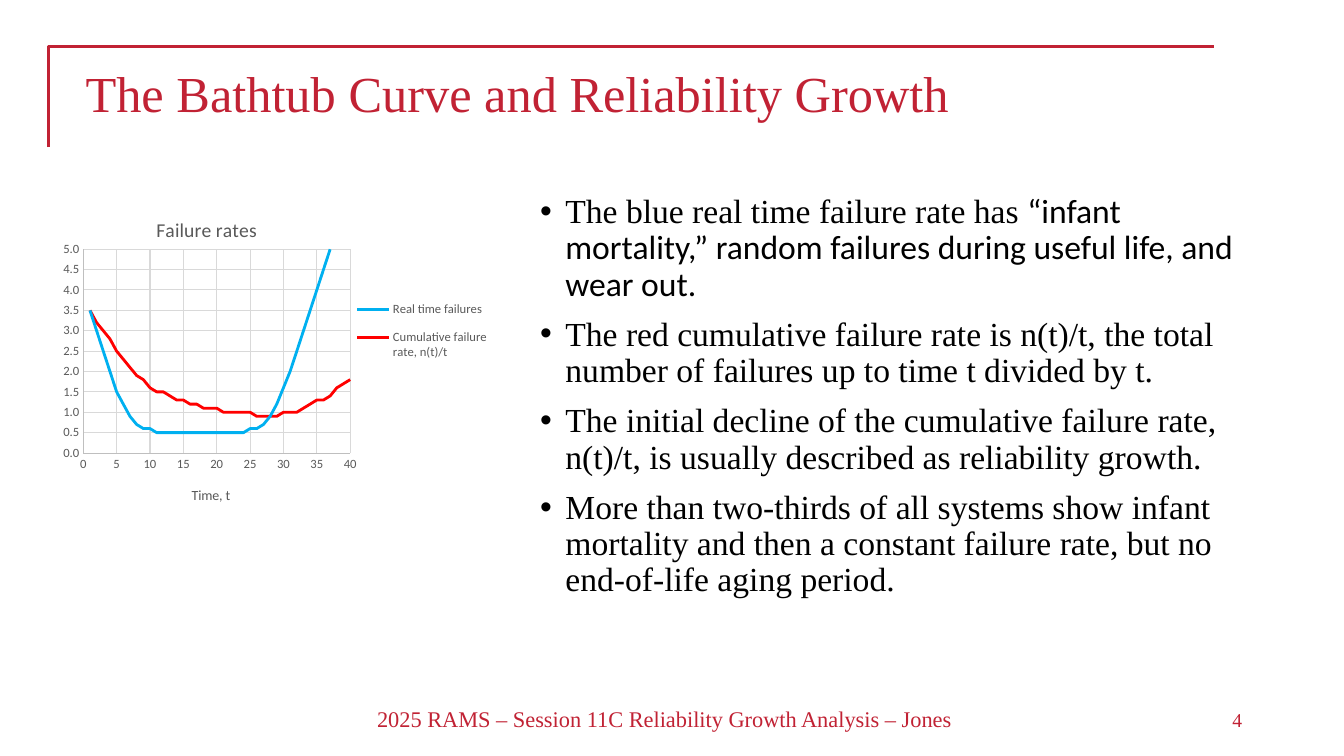
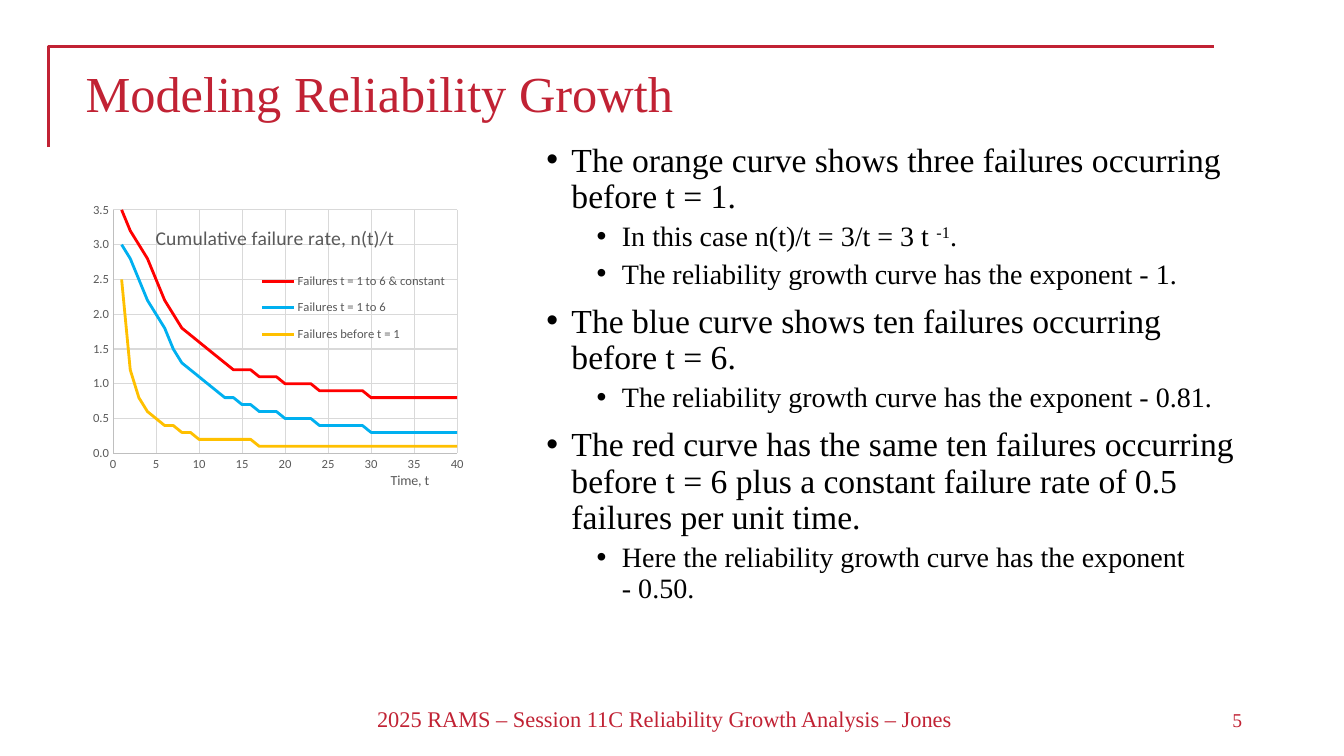
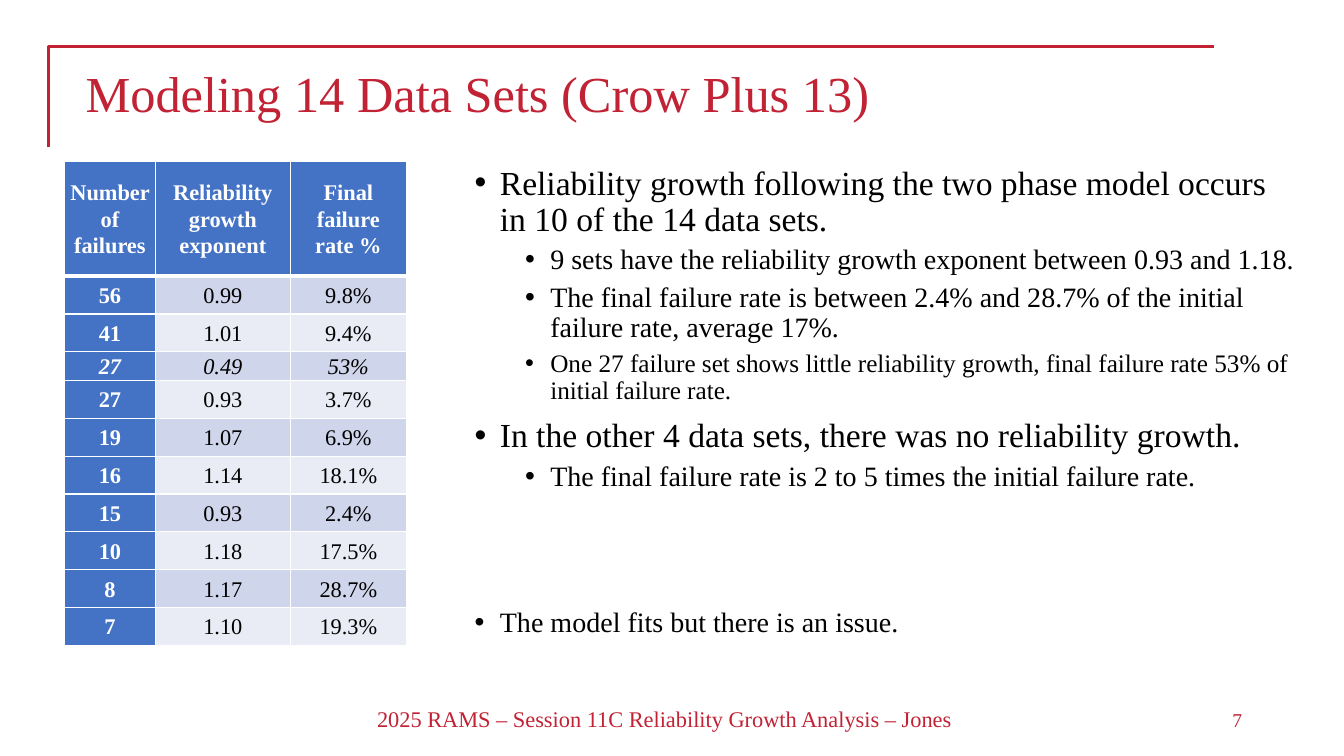
from lxml import etree
from pptx import Presentation
from pptx.chart.data import XyChartData
from pptx.dml.color import RGBColor
from pptx.enum.chart import XL_CHART_TYPE as ChartType, XL_LEGEND_POSITION as LegendPosition
from pptx.enum.chart import XL_TICK_MARK as TickMark
from pptx.enum.text import MSO_ANCHOR as Anchor, PP_ALIGN as Align
from pptx.oxml.ns import qn
from pptx.util import Inches, Pt

CRIMSON = RGBColor(0xC1, 0x22, 0x34)
BLACK = RGBColor(0, 0, 0)
WHITE = RGBColor(0xFF, 0xFF, 0xFF)
GRAY = RGBColor(0x59, 0x59, 0x59)
AXIS_GRAY = RGBColor(0xBF, 0xBF, 0xBF)
GRID_GRAY = RGBColor(0xD9, 0xD9, 0xD9)
SKY = RGBColor(0x00, 0xB0, 0xF0)
RED = RGBColor(0xFF, 0, 0)
AMBER = RGBColor(0xFF, 0xC0, 0)
HEADER_BLUE = RGBColor(0x44, 0x72, 0xC4)
BANDS = [RGBColor(0xCF, 0xD5, 0xEA), RGBColor(0xE9, 0xEB, 0xF5)]

SERIF, SANS = "Times New Roman", "Calibri"
FOOTER = "2025 RAMS – Session 11C Reliability Growth Analysis – Jones"

LEVELS = [
    {"indent": 0.25, "size": 24, "before": 10},
    {"indent": 0.75, "size": 20, "before": 5},
]

BATHTUB_CHART = {
    "at": (0.47, 1.95, 4.45, 3.17),
    "title": "Failure rates",
    "title_at": (0.235, 0.05),
    "axis_title_at": (0.316, 0.898),
    "plot_at": (0.08, 0.165, 0.595, 0.638),
    "legend_at": (0.68, 0.29, 0.31, 0.26),
    "top": 5,
    "series": [
        ("Real time failures", SKY, [
            3.5, 3, 2.5, 2, 1.5, 1.2, 0.9, 0.7, 0.6, 0.6] + [0.5] * 14 + [
            0.6, 0.6, 0.7, 0.9, 1.2, 1.6, 2, 2.5, 3, 3.5, 4, 4.5, 5, 5.5, 6, 6.5]),
        ("Cumulative failure rate, n(t)/t", RED, [
            3.5, 3.2, 3, 2.8, 2.5, 2.3, 2.1, 1.9, 1.8, 1.6,
            1.5, 1.5, 1.4, 1.3, 1.3, 1.2, 1.2, 1.1, 1.1, 1.1,
            1, 1, 1, 1, 1, 0.9, 0.9, 0.9, 0.9, 1,
            1, 1, 1.1, 1.2, 1.3, 1.3, 1.4, 1.6, 1.7, 1.8]),
    ],
}

GROWTH_CHART = {
    "at": (0.75, 2.01, 3.91, 2.88),
    "title": "Cumulative failure rate, n(t)/t",
    "title_at": (0.194, 0.063),
    "axis_title_at": (0.793, 0.926),
    "plot_at": (0.095, 0.024, 0.873, 0.848),
    "legend_at": (0.44, 0.205, 0.53, 0.32),
    "top": 3.5,
    "series": [
        ("Failures t = 1 to 6 & constant", RED, [
            3.5, 3.2, 3, 2.8, 2.5, 2.2, 2, 1.8, 1.7, 1.6,
            1.5, 1.4, 1.3, 1.2, 1.2, 1.2, 1.1, 1.1, 1.1]
            + [1] * 4 + [0.9] * 6 + [0.8] * 11),
        ("Failures t = 1 to 6", SKY, [
            3, 2.8, 2.5, 2.2, 2, 1.8, 1.5, 1.3, 1.2, 1.1,
            1, 0.9, 0.8, 0.8, 0.7, 0.7, 0.6, 0.6, 0.6]
            + [0.5] * 4 + [0.4] * 6 + [0.3] * 11),
        ("Failures before t = 1", AMBER, [
            2.5, 1.2, 0.8, 0.6, 0.5, 0.4, 0.4, 0.3, 0.3]
            + [0.2] * 7 + [0.1] * 24),
    ],
}

DATA_SETS = {
    "at": (0.64, 1.6),
    "height": 4.78,
    "columns": [0.9, 1.34, 1.15],
    "special_heights": {0: 1.14, 3: 0.26},
    "italic_row": 3,
    "rows": [
        ("Number of failures", "Reliability growth exponent", "Final failure rate %"),
        ("56", "0.99", "9.8%"),
        ("41", "1.01", "9.4%"),
        ("27", "0.49", "53%"),
        ("27", "0.93", "3.7%"),
        ("19", "1.07", "6.9%"),
        ("16", "1.14", "18.1%"),
        ("15", "0.93", "2.4%"),
        ("10", "1.18", "17.5%"),
        ("8", "1.17", "28.7%"),
        ("7", "1.10", "19.3%"),
    ],
}

PAGES = [
    {
        "title": "The Bathtub Curve and Reliability Growth",
        "number": 4,
        "chart": BATHTUB_CHART,
        "body_at": (5.26, 1.88, 7.33, 4.9),
        "bullets": [
            (0, ["The blue real time failure rate has ",
                 ("“infant mortality,” random failures during useful life, and wear out.",
                  {"name": SANS})]),
            (0, ["The red cumulative failure rate is n(t)/t, the total number of failures "
                 "up to time t divided by t."]),
            (0, ["The initial decline of the cumulative failure rate, n(t)/t, is usually "
                 "described as reliability growth."]),
            (0, ["More than two-thirds of all systems show infant mortality and then a "
                 "constant failure rate, but no end-of-life aging period."]),
        ],
    },
    {
        "title": "Modeling Reliability Growth",
        "number": 5,
        "chart": GROWTH_CHART,
        "body_at": (5.32, 1.37, 7.1, 5.38),
        "bullets": [
            (0, ["The orange curve shows three failures occurring before t = 1."]),
            (1, ["In this case n(t)/t = 3/t = 3 t ", ("-1", {"baseline": 30000}), "."]),
            (1, ["The reliability growth curve has the exponent - 1."]),
            (0, ["The blue curve shows ten failures occurring before t = 6."]),
            (1, ["The reliability growth curve has the exponent - 0.81."]),
            (0, ["The red curve has the same ten failures occurring before t = 6 plus a "
                 "constant failure rate of 0.5 failures per unit time."]),
            (1, ["Here the reliability growth curve has the exponent", "\n", "- 0.50."]),
        ],
    },
    {
        "title": "Modeling 14 Data Sets (Crow Plus 13)",
        "number": 7,
        "table": DATA_SETS,
        "body_at": (4.61, 1.6, 8.33, 5.15),
        "bullets": [
            (0, ["Reliability growth following the two phase model occurs in 10 of the 14 "
                 "data sets."]),
            (1, ["9 sets have the reliability growth exponent between 0.93 and 1.18."]),
            (1, ["The final failure rate is between 2.4% and 28.7% of the initial failure "
                 "rate, average 17%."]),
            (1, ["One 27 failure set shows little reliability growth, final failure rate "
                 "53% of initial failure rate."], {"size": 18}),
            (0, ["In the other 4 data sets, there was no reliability growth."]),
            (1, ["The final failure rate is 2 to 5 times the initial failure rate."]),
            (0, ["The model fits but there is an issue."], {"size": 20, "before": 83}),
        ],
    },
]


def style_font(font, size, color, name=SERIF, **options):
    font.color.rgb = color
    for key, value in {"size": Pt(size), "name": name, **options}.items():
        setattr(font, key, value)


def add_box(page, at, anchor=Anchor.TOP):
    frame = page.shapes.add_textbox(*map(Inches, at)).text_frame
    frame.word_wrap = True
    frame.vertical_anchor = anchor
    return frame


def add_line_of_text(page, at, text, size, align, anchor=Anchor.MIDDLE):
    para = add_box(page, at, anchor).paragraphs[0]
    para.alignment = align
    para.line_spacing = 0.9
    span = para.add_run()
    span.text = text
    style_font(span.font, size, CRIMSON)


def add_frame(page, title, number):
    builder = page.shapes.build_freeform(Inches(0.48), Inches(1.46))
    builder.add_line_segments([(Inches(0.48), Inches(0.46)), (Inches(12.04), Inches(0.46))],
                              close=False)
    corner = builder.convert_to_shape()
    corner.shadow.inherit = False
    corner.fill.background()
    corner.line.color.rgb = CRIMSON
    corner.line.width = Pt(2)
    add_line_of_text(page, (0.75, 0.64, 11.66, 0.74), title, 36, Align.LEFT, Anchor.TOP)
    add_line_of_text(page, (3.37, 6.95, 6.44, 0.4), FOOTER, 16, Align.CENTER)
    add_line_of_text(page, (9.42, 6.95, 3, 0.4), str(number), 14, Align.RIGHT)


def add_bullets(page, at, bullets):
    frame = add_box(page, at)
    for index, (level, spans, *changes) in enumerate(bullets):
        look = {**LEVELS[level], **(changes[0] if changes else {})}
        para = frame.add_paragraph() if index else frame.paragraphs[0]
        para.level = level
        para.line_spacing = 0.9
        para.space_before = Pt(look["before"] if index else 0)
        properties = para._p.get_or_add_pPr()
        properties.set("marL", str(Inches(look["indent"])))
        properties.set("indent", str(-Inches(0.25)))
        etree.SubElement(properties, qn("a:buFont"), typeface="Arial")
        etree.SubElement(properties, qn("a:buChar"), char="•")
        for item in spans:
            if item == "\n":
                para.add_line_break()
                continue
            text, extra = (item, {}) if isinstance(item, str) else item
            span = para.add_run()
            span.text = text
            style_font(span.font, look["size"], BLACK, extra.get("name", SERIF))
            if "baseline" in extra:
                span._r.get_or_add_rPr().set("baseline", str(extra["baseline"]))


def place(element, position, fractions, inner=False):
    layout = element.find(qn("c:layout"))
    if layout is not None:
        element.remove(layout)
    layout = etree.Element(qn("c:layout"))
    element.insert(position, layout)
    manual = etree.SubElement(layout, qn("c:manualLayout"))
    settings = [("layoutTarget", "inner")] if inner else []
    settings += [("xMode", "edge"), ("yMode", "edge"), *zip("xywh", fractions)]
    for tag, value in settings:
        etree.SubElement(manual, qn(f"c:{tag}"), val=str(value))


def set_title(title, text, size, at):
    para = title.text_frame.paragraphs[0]
    span = para.add_run()
    span.text = text
    style_font(span.font, size, GRAY, SANS, bold=False)
    place(title._element, 1, at)


def add_rate_chart(page, plan):
    data = XyChartData(number_format="0.0")
    for name, _, values in plan["series"]:
        series = data.add_series(name)
        for time, value in enumerate(values, 1):
            series.add_data_point(time, value)
    chart = page.shapes.add_chart(ChartType.XY_SCATTER_LINES_NO_MARKERS,
                                  *map(Inches, plan["at"]), data).chart
    style_font(chart.font, 10, BLACK, SANS)
    chart.plots[0].vary_by_categories = False
    for series, (_, color, _) in zip(chart.plots[0].series, plan["series"]):
        series.smooth = False
        series.format.line.color.rgb = color
        series.format.line.width = Pt(2)

    scales = [(chart.category_axis, 40, 5, "General"),
              (chart.value_axis, plan["top"], 0.5, "0.0")]
    for axis, top, step, number_format in scales:
        settings = {"minimum_scale": 0, "maximum_scale": top, "major_unit": step,
                    "major_tick_mark": TickMark.NONE, "minor_tick_mark": TickMark.NONE,
                    "has_major_gridlines": True}
        for key, value in settings.items():
            setattr(axis, key, value)
        axis.tick_labels.number_format = number_format
        axis.tick_labels.number_format_is_linked = False
        style_font(axis.tick_labels.font, 9, GRAY, SANS)
        for line, color in [(axis.format.line, AXIS_GRAY),
                            (axis.major_gridlines.format.line, GRID_GRAY)]:
            line.color.rgb = color
            line.width = Pt(0.75)

    chart.has_title = True
    set_title(chart.chart_title, plan["title"], 14, plan["title_at"])
    set_title(chart.category_axis.axis_title, "Time, t", 10, plan["axis_title_at"])
    chart.has_legend = True
    chart.legend.position = LegendPosition.RIGHT
    chart.legend.include_in_layout = False
    style_font(chart.legend.font, 9, GRAY, SANS)
    place(chart.legend._element, 1, plan["legend_at"])
    place(chart._chartSpace.chart.plotArea, 0, plan["plot_at"], inner=True)


def set_borders(cell, widths):
    properties = cell._tc.get_or_add_tcPr()
    for side, width in widths.items():
        line = etree.SubElement(properties, qn(f"a:ln{side}"), w=str(Pt(width)))
        fill = etree.SubElement(line, qn("a:solidFill"))
        etree.SubElement(fill, qn("a:srgbClr"), val=str(WHITE))


def add_data_table(page, plan):
    rows, columns, special = plan["rows"], plan["columns"], plan["special_heights"]
    regular = (plan["height"] - sum(special.values())) / (len(rows) - len(special))
    left, top = plan["at"]
    table = page.shapes.add_table(len(rows), len(columns), Inches(left), Inches(top),
                                  Inches(sum(columns)), Inches(plan["height"])).table
    for column, width in zip(table.columns, columns):
        column.width = Inches(width)
    for row_index, texts in enumerate(rows):
        table.rows[row_index].height = Inches(special.get(row_index, regular))
        for column_index, text in enumerate(texts):
            cell = table.cell(row_index, column_index)
            heading = row_index == 0 or column_index == 0
            set_borders(cell, {"L": 1, "R": 1, "T": 3 if row_index == 1 else 1,
                               "B": 3 if row_index == 0 else 1})
            cell.fill.solid()
            cell.fill.fore_color.rgb = HEADER_BLUE if heading else BANDS[(row_index - 1) % 2]
            margins = {"margin_left": Inches(0.05), "margin_right": Inches(0.05),
                       "margin_top": 0, "margin_bottom": 0,
                       "vertical_anchor": Anchor.MIDDLE}
            for key, value in margins.items():
                setattr(cell, key, value)
            para = cell.text_frame.paragraphs[0]
            para.alignment = Align.CENTER
            para.line_spacing = 1.07
            span = para.add_run()
            span.text = text
            style_font(span.font, 16, WHITE if heading else BLACK, bold=heading,
                       italic=row_index == plan["italic_row"])


def main():
    deck = Presentation()
    deck.slide_width, deck.slide_height = Inches(13.33), Inches(7.5)
    for plan in PAGES:
        page = deck.slides.add_slide(deck.slide_layouts[6])
        add_frame(page, plan["title"], plan["number"])
        add_bullets(page, plan["body_at"], plan["bullets"])
        if "chart" in plan:
            add_rate_chart(page, plan["chart"])
        if "table" in plan:
            add_data_table(page, plan["table"])
    deck.save("out.pptx")


if __name__ == "__main__":
    main()
